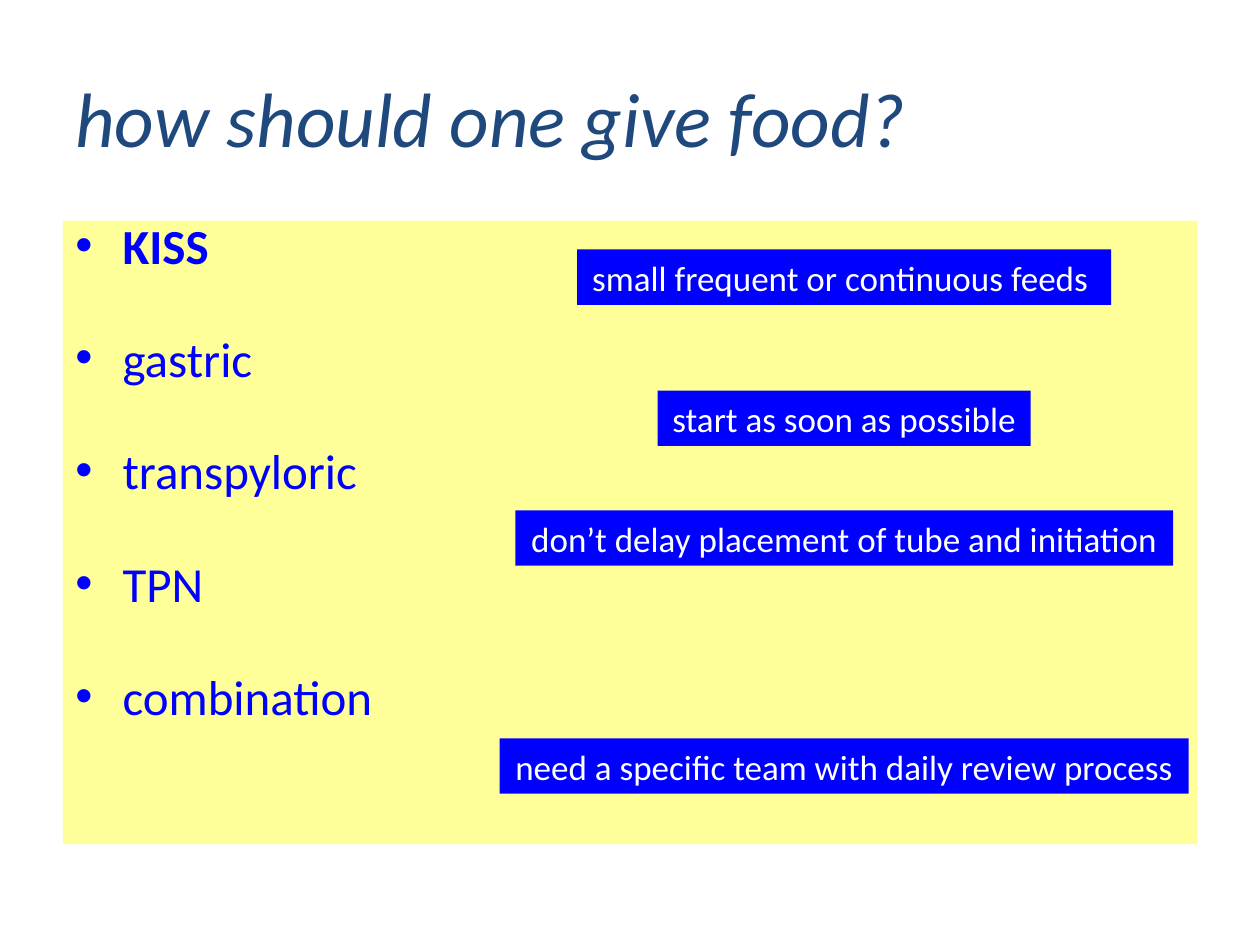
import dataclasses

import pptx
import pptx.util
import pptx.dml.color
import pptx.enum.shapes
import pptx.enum.text
import pptx.oxml
import pptx.oxml.ns

Pt = pptx.util.Pt
Anchor = pptx.enum.text.MSO_ANCHOR
Align = pptx.enum.text.PP_ALIGN
Fit = pptx.enum.text.MSO_AUTO_SIZE


@dataclasses.dataclass(frozen=True)
class Theme:
    font: str = "Calibri"
    navy: str = "1F497D"
    blue: str = "0000FF"
    pale: str = "FFFF99"
    white: str = "FFFFFF"
    title: int = 44
    body: int = 28
    label: int = 20


def apply(item, values):
    for name, value in values.items():
        setattr(item, name, value)


class Deck:
    """Draws styled elements on a slide with a grid of 100 columns and 75 rows."""

    def __init__(self, theme):
        self.theme = theme
        self.prs = pptx.Presentation()
        apply(self.prs, {"slide_width": pptx.util.Inches(10),
                         "slide_height": pptx.util.Inches(7.5)})
        self.slide = self.prs.slides.add_slide(self.prs.slide_layouts[6])

    def grid(self, left, top, width, height):
        col, row = self.prs.slide_width / 100, self.prs.slide_height / 75
        return [round(n * unit) for n, unit in
                zip((left, top, width, height), (col, row, col, row))]

    def block(self, area, fill):
        shape = self.slide.shapes.add_shape(
            pptx.enum.shapes.MSO_SHAPE.RECTANGLE, *self.grid(*area))
        shape.shadow.inherit = False
        shape.fill.solid()
        shape.fill.fore_color.rgb = pptx.dml.color.RGBColor.from_string(fill)
        shape.line.fill.background()
        return shape.text_frame

    def words(self, para, text, size, color, align=Align.LEFT, **style):
        para.alignment = align
        run = para.add_run()
        run.text = text
        apply(run.font, {"name": self.theme.font, "size": Pt(size), **style})
        run.font.color.rgb = pptx.dml.color.RGBColor.from_string(color)

    def title(self, text, area):
        frame = self.slide.shapes.add_textbox(*self.grid(*area)).text_frame
        apply(frame, {"word_wrap": True, "vertical_anchor": Anchor.MIDDLE})
        self.words(frame.paragraphs[0], text, self.theme.title,
                   self.theme.navy, italic=True)

    def bullets(self, items, area):
        frame = self.block(area, self.theme.pale)
        apply(frame, {"word_wrap": True, "vertical_anchor": Anchor.TOP})
        for i, text in enumerate(items):
            para = frame.add_paragraph() if i else frame.paragraphs[0]
            apply(para, {"line_spacing": 0.8,
                         "space_before": Pt(37.5 if i else 5)})
            self.words(para, text, self.theme.body, self.theme.blue, bold=not i)
            props = para._p.get_or_add_pPr()
            props.set("marL", str(Pt(27)))
            props.set("indent", str(-Pt(27)))
            for tag, key, value in (("a:buFont", "typeface", "Arial"),
                                    ("a:buChar", "char", "•")):
                mark = pptx.oxml.ns.qn(tag)
                props.append(props.makeelement(mark, {key: value}))

    def label(self, text, mid, top, width):
        frame = self.block((mid - width / 2, top, width, 4.4), self.theme.blue)
        apply(frame, {"word_wrap": False, "vertical_anchor": Anchor.MIDDLE,
                      "auto_size": Fit.SHAPE_TO_FIT_TEXT})
        self.words(frame.paragraphs[0], text, self.theme.label,
                   self.theme.white, Align.CENTER)


def main():
    deck = Deck(Theme())
    deck.title("how should one give food?", (5, 3, 90, 12.5))
    deck.bullets(("KISS", "gastric", "transpyloric", "TPN", "combination"),
                 (5, 17.5, 90, 49.5))
    for text, top, width in (
            ("small frequent or continuous feeds ", 19.8, 42.4),
            ("start as soon as possible", 31, 29.6),
            ("don’t delay placement of tube and initiation", 40.5, 52.2),
            ("need a specific team with daily review process", 58.6, 54.7)):
        deck.label(text, 67, top, width)
    deck.prs.save("out.pptx")


if __name__ == "__main__":
    main()
